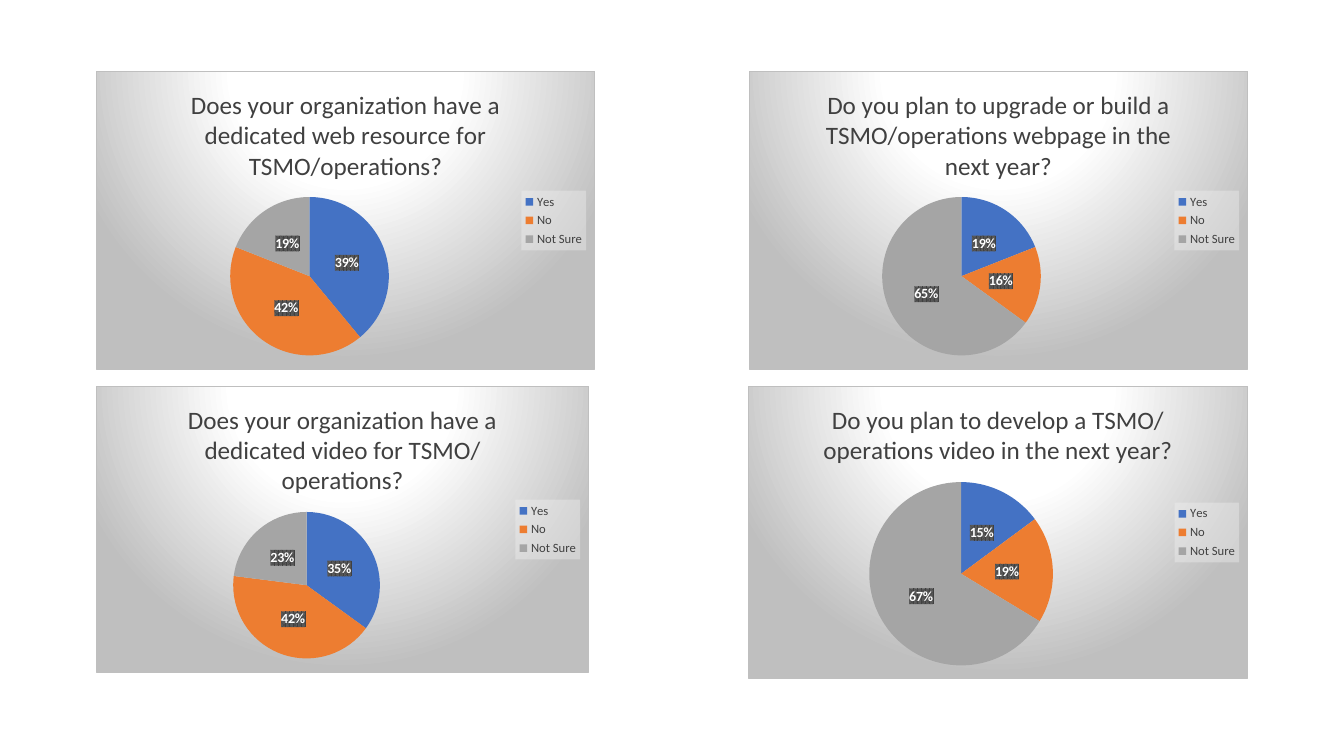
import pptx
import pptx.util
import pptx.chart.data
import pptx.enum.chart
import pptx.oxml
from pptx.dml.color import RGBColor
from pptx.oxml.ns import qn

PX = 9071
FONT = "Calibri"
DARK = RGBColor(0x40, 0x40, 0x40)
BLACK = RGBColor(0, 0, 0)
WHITE = RGBColor(255, 255, 255)
BLUE = RGBColor(0x44, 0x72, 0xC4)
ORANGE = RGBColor(0xED, 0x7D, 0x31)
GRAY = RGBColor(0xA5, 0xA5, 0xA5)
PALE = RGBColor(0xF2, 0xF2, 0xF2)
SILVER = RGBColor(0xBF, 0xBF, 0xBF)
SLATE = RGBColor(0x59, 0x59, 0x59)

SPACE = ('xmlns:c="http://schemas.openxmlformats.org/drawingml/2006/chart" '
         'xmlns:a="http://schemas.openxmlformats.org/drawingml/2006/main"')
PANEL = f'''<a:gradFill><a:gsLst>
<a:gs pos="0"><a:srgbClr val="{WHITE}"/></a:gs>
<a:gs pos="39000"><a:srgbClr val="{WHITE}"/></a:gs>
<a:gs pos="100000"><a:srgbClr val="{SILVER}"/></a:gs></a:gsLst>
<a:path path="circle"><a:fillToRect l="50000" t="-80000" r="50000" b="180000"/></a:path>
</a:gradFill><a:ln w="9525"><a:solidFill><a:srgbClr val="{SILVER}"/></a:solidFill></a:ln>'''
KEY = f'''<a:solidFill><a:srgbClr val="{PALE}"><a:alpha val="39000"/></a:srgbClr></a:solidFill>
<a:ln><a:noFill/></a:ln>'''
TAG = f'''<a:pattFill prst="pct75"><a:fgClr><a:srgbClr val="{DARK}"/></a:fgClr>
<a:bgClr><a:srgbClr val="{SLATE}"/></a:bgClr></a:pattFill><a:ln><a:noFill/></a:ln>'''

CHARTS = [
    ("Does your organization have a dedicated web resource for TSMO/operations?",
     (39, 42, 19), (96, 71, 499, 299), (134, 126, 159)),
    ("Do you plan to upgrade or build a TSMO/operations webpage in the next year?",
     (19, 16, 65), (749, 71, 499, 299), (133, 126, 159)),
    ("Does your organization have a dedicated video for TSMO/operations?",
     (35, 42, 23), (96, 386, 493, 287), (137, 126, 147)),
    ("Do you plan to develop a TSMO/operations video in the next year?",
     (15, 19, 67), (748, 386, 500, 293), (121, 96, 184)),
]


def style(font, size, color, bold=False):
    font.name = FONT
    font.size = pptx.util.Pt(size)
    font.color.rgb = color
    font.bold = bold


def dress(node, paint):
    shape = pptx.oxml.parse_xml(f"<c:spPr {SPACE}>{paint}</c:spPr>")
    node.find(qn("c:txPr")).addprevious(shape)


def place(plot, box, pie):
    wide, high = box[2:]
    left, top, side = pie
    parts = {"x": left / wide, "y": top / high, "w": side / wide, "h": side / high}
    spots = "".join(f'<c:{key} val="{part:.4f}"/>' for key, part in parts.items())
    old = plot.find(qn("c:layout"))
    if old is not None:
        plot.remove(old)
    plot.insert(0, pptx.oxml.parse_xml(
        f'<c:layout {SPACE}><c:manualLayout><c:layoutTarget val="inner"/>'
        f'<c:xMode val="edge"/><c:yMode val="edge"/>{spots}</c:manualLayout></c:layout>'))


def add_pie(slide, title, values, box, pie):
    data = pptx.chart.data.CategoryChartData()
    data.categories = ["Yes", "No", "Not Sure"]
    data.add_series("Series 1", values)
    frame = slide.shapes.add_chart(
        pptx.enum.chart.XL_CHART_TYPE.PIE, *(n * PX for n in box), data)
    chart = frame.chart
    style(chart.font, 10, BLACK)
    dress(chart._chartSpace, PANEL)

    chart.has_title = True
    run = chart.chart_title.text_frame.paragraphs[0].add_run()
    run.text = title
    style(run.font, 18, DARK)
    chart.chart_title.include_in_layout = False

    chart.has_legend = True
    legend = chart.legend
    legend.position = pptx.enum.chart.XL_LEGEND_POSITION.RIGHT
    legend.include_in_layout = False
    style(legend.font, 9, DARK)
    dress(legend._element, KEY)

    plot = chart.plots[0]
    plot.vary_by_categories = True
    for i, color in enumerate((BLUE, ORANGE, GRAY)):
        fill = plot.series[0].points[i].format.fill
        fill.solid()
        fill.fore_color.rgb = color
    labels = plot.series[0].data_labels
    labels.show_value = True
    labels.number_format = '0"%"'
    labels.number_format_is_linked = False
    labels.position = pptx.enum.chart.XL_LABEL_POSITION.CENTER
    style(labels.font, 10, WHITE, True)
    dress(labels._element, TAG)
    place(chart._chartSpace.chart.plotArea, box, pie)


def main():
    deck = pptx.Presentation()
    deck.slide_width = 1344 * PX
    deck.slide_height = 756 * PX
    slide = deck.slides.add_slide(deck.slide_layouts[6])
    for item in CHARTS:
        add_pie(slide, *item)
    deck.save("out.pptx")


if __name__ == "__main__":
    main()
